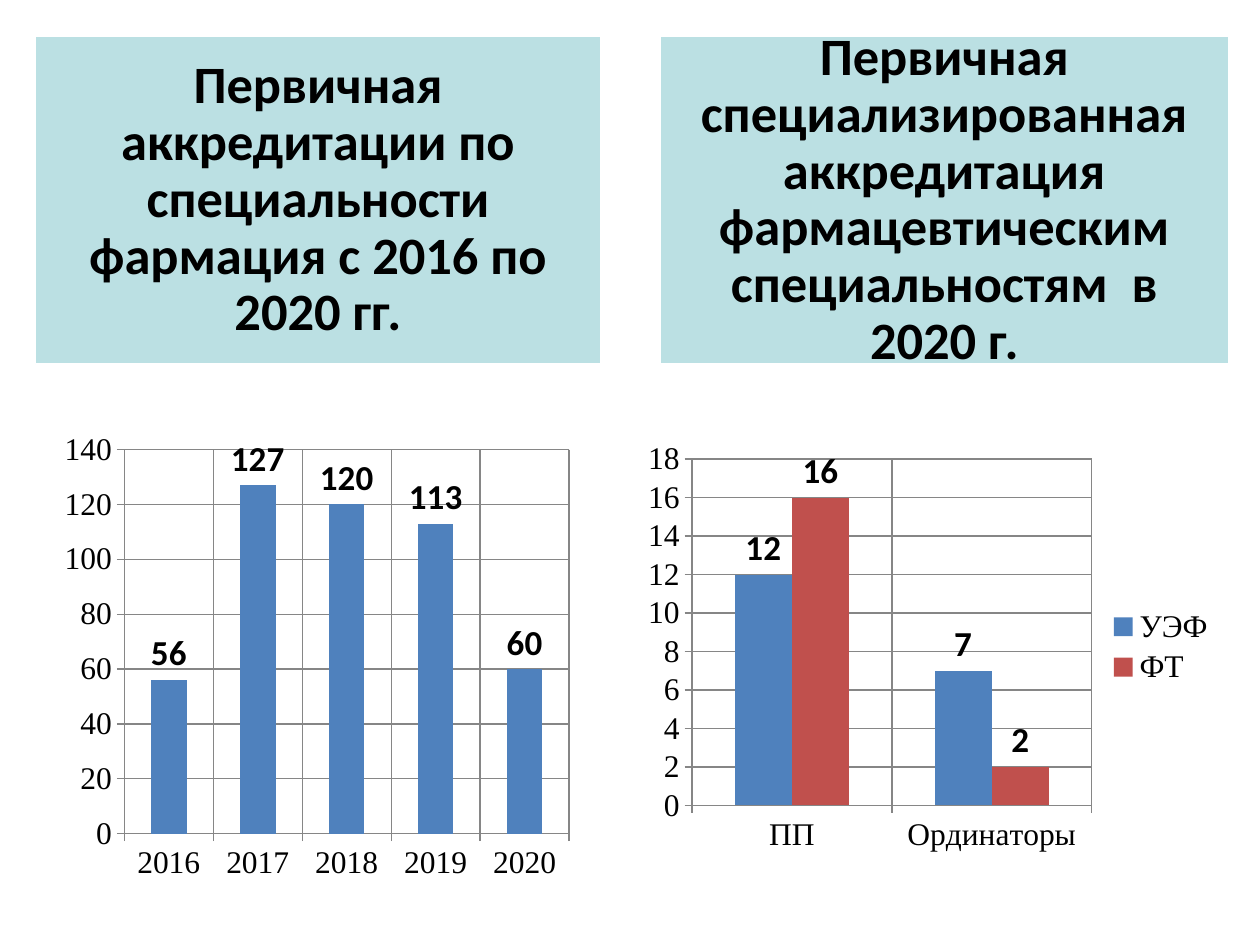
import pptx
import pptx.util
import pptx.chart.data
import pptx.dml.color
import pptx.enum.chart
import pptx.enum.text

COLORS = {
    "panel": "BBE0E3",
    "border": "FFFFFF",
    "text": "000000",
    "grid": "868686",
    "blue": "4F81BD",
    "red": "C0504D",
}
HEADING_FONT = {"name": "Calibri", "size": pptx.util.Pt(30), "bold": True}
CHART_FONT = {"name": "Calibri", "size": pptx.util.Pt(18), "bold": False}
AXIS_FONT = {"name": "Times New Roman", "size": pptx.util.Pt(18), "bold": False}
LABEL_FONT = {"name": "Calibri", "size": pptx.util.Pt(20), "bold": True}
HEADING_FRAME = {
    "word_wrap": True,
    "auto_size": pptx.enum.text.MSO_AUTO_SIZE.NONE,
    "vertical_anchor": pptx.enum.text.MSO_ANCHOR.MIDDLE,
}
HEADING_PARAGRAPH = {
    "alignment": pptx.enum.text.PP_ALIGN.CENTER,
    "line_spacing": 0.9,
    "space_before": pptx.util.Pt(0),
}


def color(name):
    return pptx.dml.color.RGBColor.from_string(COLORS[name])


def apply(target, values):
    for attribute, value in values.items():
        setattr(target, attribute, value)


def box(left, top, width, height):
    return [pptx.util.Inches(length) for length in (left, top, width, height)]


class ComparisonSlide:
    def __init__(self, presentation):
        self.slide = presentation.slides.add_slide(presentation.slide_layouts[4])
        self.headings = {1, 3}
        for placeholder in list(self.slide.placeholders):
            if placeholder.placeholder_format.idx not in self.headings:
                placeholder.element.getparent().remove(placeholder.element)

    def style_font(self, font, values):
        apply(font, values)
        font.color.rgb = color("text")

    def add_heading(self, index, text, area):
        heading = self.slide.placeholders[index]
        apply(heading, dict(zip(("left", "top", "width", "height"), box(*area))))
        heading.fill.solid()
        heading.fill.fore_color.rgb = color("panel")
        heading.line.color.rgb = color("border")
        heading.line.width = pptx.util.Pt(0.75)
        heading.text_frame.text = text
        apply(heading.text_frame, HEADING_FRAME)
        paragraph = heading.text_frame.paragraphs[0]
        apply(paragraph, HEADING_PARAGRAPH)
        self.style_font(paragraph.runs[0].font, HEADING_FONT)

    def style_axis(self, axis):
        axis.major_tick_mark = pptx.enum.chart.XL_TICK_MARK.OUTSIDE
        axis.has_major_gridlines = True
        for line in (axis.format.line, axis.major_gridlines.format.line):
            line.color.rgb = color("grid")
            line.width = pptx.util.Pt(0.75)
        self.style_font(axis.tick_labels.font, AXIS_FONT)

    def add_columns(self, categories, series, scale, area, legend=False):
        data = pptx.chart.data.CategoryChartData()
        data.categories = categories
        for name, values, fill in series:
            data.add_series(name, values)
        chart = self.slide.shapes.add_chart(
            pptx.enum.chart.XL_CHART_TYPE.COLUMN_CLUSTERED, *box(*area), data
        ).chart
        self.style_font(chart.font, CHART_FONT)
        chart.has_title = False
        chart.has_legend = legend
        if legend:
            chart.legend.position = pptx.enum.chart.XL_LEGEND_POSITION.RIGHT
            chart.legend.include_in_layout = False
            self.style_font(chart.legend.font, AXIS_FONT)
        for axis in (chart.category_axis, chart.value_axis):
            self.style_axis(axis)
        apply(chart.value_axis, scale)
        plot = chart.plots[0]
        apply(plot, {"gap_width": 150, "overlap": 0, "vary_by_categories": False})
        for columns, (name, values, fill) in zip(plot.series, series):
            columns.format.fill.solid()
            columns.format.fill.fore_color.rgb = color(fill)
            labels = columns.data_labels
            labels.show_value = True
            labels.position = pptx.enum.chart.XL_LABEL_POSITION.OUTSIDE_END
            self.style_font(labels.font, LABEL_FONT)


def main():
    presentation = pptx.Presentation()
    presentation.slide_width = pptx.util.Inches(10)
    presentation.slide_height = pptx.util.Inches(7.5)
    accreditation = ComparisonSlide(presentation)

    accreditation.add_heading(
        1,
        "Первичная аккредитации по специальности фармация с 2016 по 2020 гг.",
        (0.28, 0.29, 4.49, 2.6),
    )
    accreditation.add_columns(
        ["2016", "2017", "2018", "2019", "2020"],
        [("Series 1", (56, 127, 120, 113, 60), "blue")],
        {"minimum_scale": 0, "maximum_scale": 140, "major_unit": 20},
        (0.43, 3.36, 4.17, 3.7),
    )
    accreditation.add_heading(
        3,
        "Первичная специализированная аккредитация "
        "фармацевтическим специальностям  в 2020 г.",
        (5.24, 0.29, 4.51, 2.6),
    )
    accreditation.add_columns(
        ["ПП", "Ординаторы"],
        [("УЭФ", (12, 7), "blue"), ("ФТ", (16, 2), "red")],
        {"minimum_scale": 0, "maximum_scale": 18, "major_unit": 2},
        (5.05, 3.44, 4.7, 3.39),
        legend=True,
    )
    presentation.save("out.pptx")


if __name__ == "__main__":
    main()
